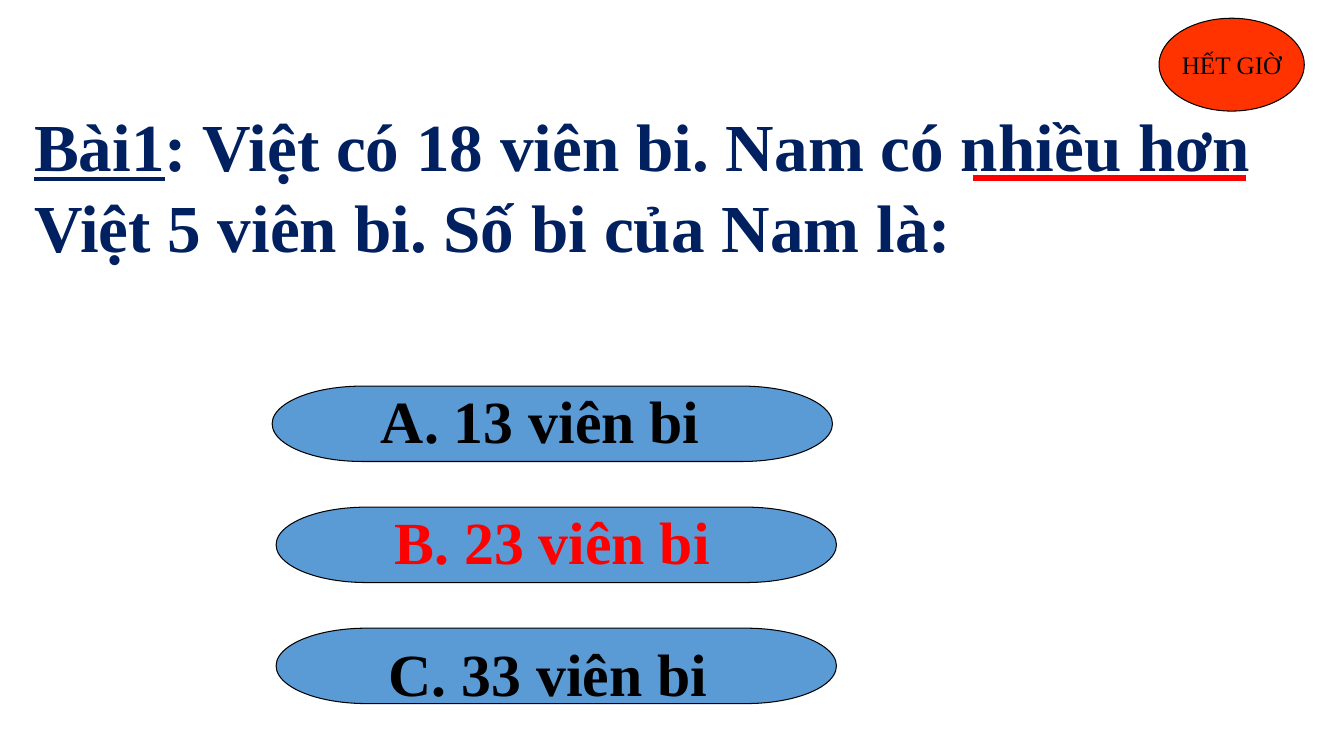
from dataclasses import dataclass

from lxml.etree import SubElement
from pptx import Presentation
from pptx.dml.color import RGBColor
from pptx.enum.shapes import MSO_CONNECTOR as Connector, MSO_SHAPE as Shape
from pptx.enum.text import MSO_ANCHOR as Anchor, PP_ALIGN as Align
from pptx.oxml.ns import qn
from pptx.util import Cm, Pt


@dataclass(frozen=True)
class Theme:
    font: str = "Times New Roman"
    navy: str = "002060"
    black: str = "000000"
    red: str = "FF0000"
    pill: str = "5B9BD5"
    badge: str = "FF3300"
    badge_text: str = "000514"
    question_size: float = 48
    answer_size: float = 42.7
    badge_size: float = 18
    outline: float = 0.75
    mark: float = 4.5


THEME = Theme()


def rgb(value):
    return RGBColor.from_string(value)


def add_run(para, text, size, color, bold=True, underline=False):
    span = para.add_run()
    span.text = text
    font = span.font
    font.name, font.size, font.bold = THEME.font, Pt(size), bold
    font.underline = underline
    font.color.rgb = rgb(color)


def add_outlined(page, kind, box, fill):
    shape = page.shapes.add_shape(kind, *map(Cm, box))
    shape.shadow.inherit = False
    shape.fill.solid()
    shape.fill.fore_color.rgb = rgb(fill)
    shape.line.color.rgb = rgb(THEME.black)
    shape.line.width = Pt(THEME.outline)
    return shape


def add_paragraph_box(page, box, align):
    """Add a wrapping text box and return its first paragraph."""
    frame = page.shapes.add_textbox(*map(Cm, box)).text_frame
    frame.word_wrap = True
    para = frame.paragraphs[0]
    para.alignment = align
    para.line_spacing = 1.0
    return para


def add_question(page, box):
    para = add_paragraph_box(page, box, Align.LEFT)
    add_run(para, "Bài1", THEME.question_size, THEME.navy, underline=True)
    add_run(para, ": Việt có 18 viên bi. Nam có nhiều hơn Việt 5 viên bi. "
                  "Số bi của Nam là:", THEME.question_size, THEME.navy)


def add_key_phrase_mark(page, box):
    left, top, width, _ = box
    start, length, drop = 23.9, 6.88, 1.98
    mark = page.shapes.add_connector(
        Connector.STRAIGHT, Cm(left + start), Cm(top + drop),
        Cm(left + start + length), Cm(top + drop))
    mark.line.color.rgb = rgb(THEME.red)
    mark.line.width = Pt(THEME.mark)
    SubElement(mark._element.spPr, qn("a:effectLst"))


def add_answer(page, box, text, color, shift):
    """Add a pill with a label moved from the pill's corner by shift."""
    left, top, _, _ = box
    add_outlined(page, Shape.FLOWCHART_TERMINATOR, box, THEME.pill)
    label = (left + shift[0], top + shift[1], 11.28, 2.08)
    add_run(add_paragraph_box(page, label, Align.CENTER),
            text, THEME.answer_size, color)


def add_answers(page, box):
    left, top, width, height = box
    pitch = 3.05
    answers = [
        ("A. 13 viên bi", THEME.black, -0.1, (1.12, -0.18)),
        ("B. 23 viên bi", THEME.red, 0, (1.32, -0.18)),
        ("C. 33 viên bi", THEME.black, 0, (1.21, 0.08)),
    ]
    for row, (text, color, indent, shift) in enumerate(answers):
        pill = (left + indent, top + row * pitch, width, height)
        add_answer(page, pill, text, color, shift)


def add_time_badge(page, box):
    badge = add_outlined(page, Shape.OVAL, box, THEME.badge)
    frame = badge.text_frame
    frame.word_wrap = False
    frame.vertical_anchor = Anchor.MIDDLE
    para = frame.paragraphs[0]
    para.alignment = Align.CENTER
    add_run(para, "HẾT GIỜ", THEME.badge_size, THEME.badge_text, bold=False)


def main():
    deck = Presentation()
    deck.slide_width, deck.slide_height = Cm(33.87), Cm(19.05)
    page = deck.slides.add_slide(deck.slide_layouts[6])
    question = (0.61, 2.51, 32.92, 4.37)
    add_question(page, question)
    add_answers(page, (6.96, 9.73, 14.12, 1.9))
    add_time_badge(page, (29.21, 0.46, 3.66, 2.34))
    add_key_phrase_mark(page, question)
    deck.save("out.pptx")


if __name__ == "__main__":
    main()
